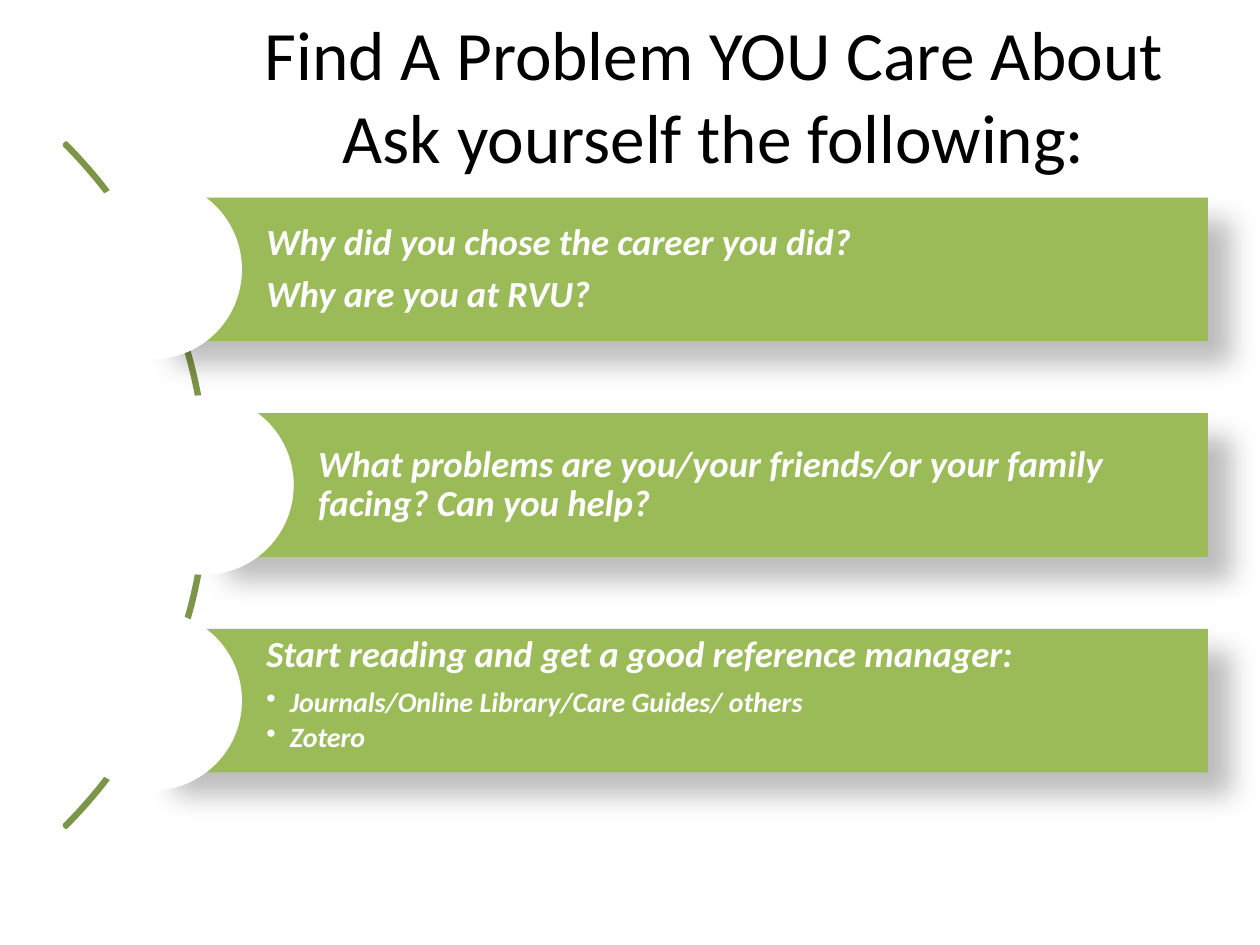
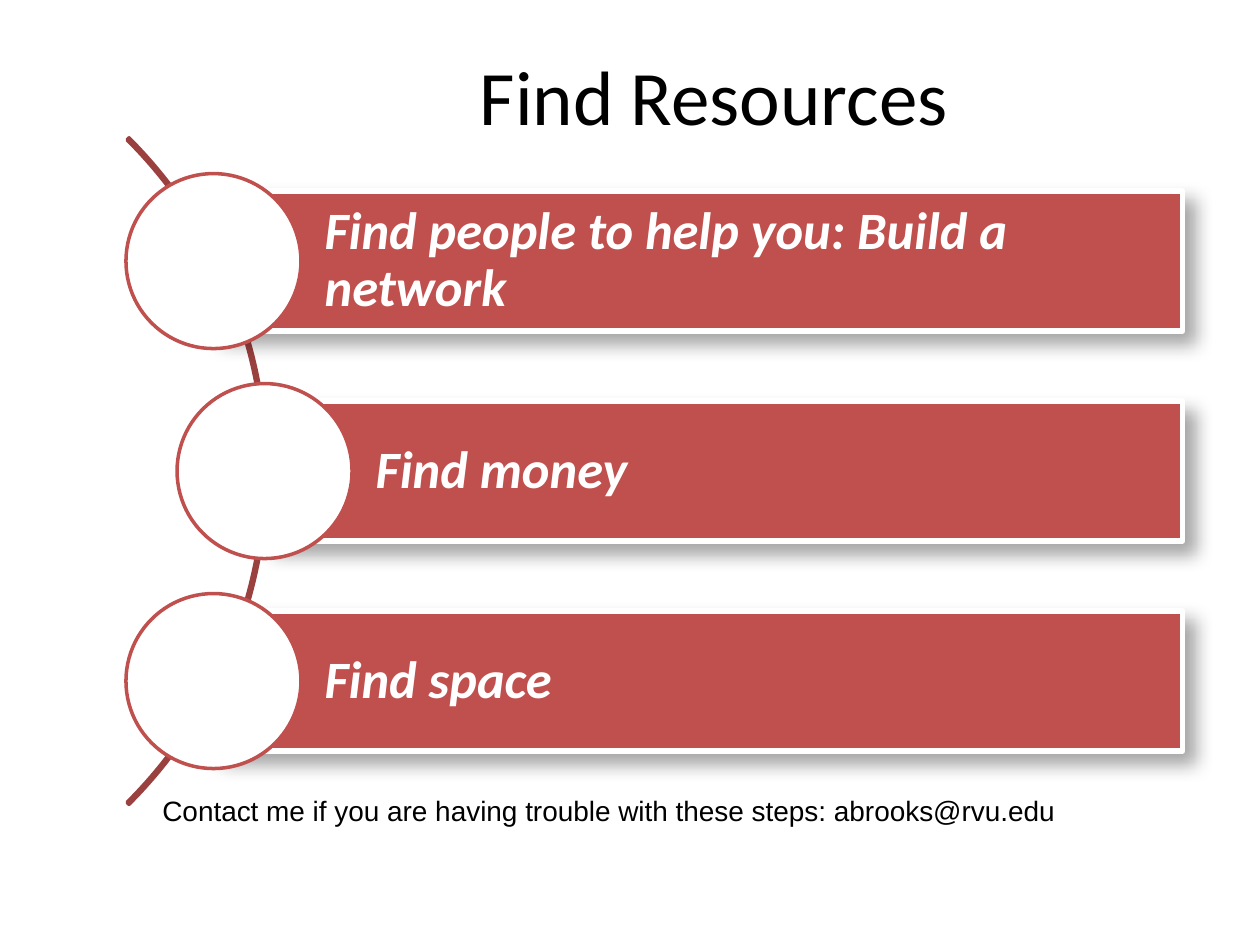
from lxml.etree import SubElement
from pptx import Presentation
from pptx.dml.color import RGBColor
from pptx.enum.shapes import MSO_SHAPE
from pptx.enum.text import MSO_ANCHOR, MSO_AUTO_SIZE, PP_ALIGN
from pptx.oxml.ns import qn
from pptx.util import Pt

WHITE, BLACK = "FFFFFF", "000000"
GREEN, DARK_GREEN = "9BBB59", "7C9647"
RED, DARK_RED = "C0504D", "9A403E"
CIRCLE_RATIO = 1.25  # circle diameter to bar height


def color(hex_text):
    return RGBColor.from_string(hex_text)


def add_text(tf, text, size, font="Calibri", fill=BLACK, bold=False, italic=False,
             align=None, spacing=None, after=None, bullet_indent=None):
    """Fill the first paragraph if it is empty, else add another one."""
    p = tf.paragraphs[0]
    if p.text:
        p = tf.add_paragraph()
    if bullet_indent:
        p_pr = p._p.get_or_add_pPr()
        p_pr.set("marL", str(Pt(bullet_indent)))
        p_pr.set("indent", str(-Pt(bullet_indent)))
        SubElement(p_pr, qn("a:buChar"), char="•")
    if align is not None:
        p.alignment = align
    if spacing:
        p.line_spacing = spacing
    if after is not None:
        p.space_after = Pt(after)
    for i, line in enumerate(text.split("\n")):
        if i:
            p.add_line_break()
        r = p.add_run()
        r.text = line
        r.font.name, r.font.size = font, Pt(size)
        r.font.bold, r.font.italic = bold, italic
        r.font.color.rgb = color(fill)


def add_title(s, text, size):
    sp = s.shapes.title
    sp.left, sp.top, sp.width, sp.height = Pt(84), Pt(9), Pt(648), Pt(90)
    tf = sp.text_frame
    tf.auto_size, tf.vertical_anchor = MSO_AUTO_SIZE.NONE, MSO_ANCHOR.MIDDLE
    add_text(tf, text, size, align=PP_ALIGN.CENTER)


def add_shape(s, kind, left, top, width, height, fill=None, line=None, line_width=2):
    sp = s.shapes.add_shape(kind, Pt(left), Pt(top), Pt(width), Pt(height))
    sp.shadow.inherit = False
    if fill:
        sp.fill.solid()
        sp.fill.fore_color.rgb = color(fill)
    else:
        sp.fill.background()
    if line:
        sp.line.color.rgb = color(line)
        sp.line.width = Pt(line_width)
    else:
        sp.line.fill.background()
    return sp


def add_shadow(sp, alpha, blur, distance):
    effects = sp._element.spPr.find(qn("a:effectLst"))
    shadow = SubElement(effects, qn("a:outerShdw"), blurRad=str(Pt(blur)),
                        dist=str(Pt(distance)), dir="2700000", algn="tl",
                        rotWithShape="0")
    rgb = SubElement(shadow, qn("a:srgbClr"), val=BLACK)
    SubElement(rgb, qn("a:alpha"), val=str(alpha * 1000))


def add_arc(s, left, mid, diameter, line):
    sp = add_shape(s, MSO_SHAPE.BLOCK_ARC, left, mid - diameter / 2,
                   diameter, diameter, line=line)
    # Angles in 1/60000 degree, scaled by 100000: from 315 to 45 degrees
    for i, value in enumerate((189, 27, 0.003)):
        sp.adjustments[i] = value


def add_step(s, left, mid, right, height, fill, inset, pad, shadow,
             bar_line=None, circle_line=None):
    """A bar with a circle centred on its left end; returns the bar's text frame."""
    bar = add_shape(s, MSO_SHAPE.RECTANGLE, left, mid - height / 2, right - left,
                    height, fill, bar_line, 3)
    add_shadow(bar, *shadow)
    d = height * CIRCLE_RATIO
    add_shape(s, MSO_SHAPE.OVAL, left - d / 2, mid - d / 2, d, d, WHITE, circle_line)
    tf = bar.text_frame
    tf.word_wrap, tf.vertical_anchor = True, MSO_ANCHOR.MIDDLE
    tf.margin_left = Pt(inset)
    tf.margin_top = tf.margin_right = tf.margin_bottom = Pt(pad)
    return tf


def add_steps(s, lefts, first_mid, pitch, **style):
    return [add_step(s, left, first_mid + i * pitch, **style)
            for i, left in enumerate(lefts)]


def add_step_text(tf, text, size, after=0.35, bullet_indent=None):
    add_text(tf, text, size, fill=WHITE, bold=True, italic=True, align=PP_ALIGN.LEFT,
             spacing=0.9, after=size * after, bullet_indent=bullet_indent)


def build_problem(s):
    add_title(s, "Find A Problem YOU Care About\nAsk yourself the following:", 39.6)
    add_arc(s, -434.2, 277.2, 553, DARK_GREEN)
    why, problems, reading = add_steps(
        s, (87, 116.6, 87), 154, 123.2, right=690.2, height=82.1, fill=GREEN,
        inset=65.2, pad=4.2, shadow=(26, 15, 18))
    add_step_text(why, "Why did you chose the career you did?", 21)
    add_step_text(why, "Why are you at RVU?", 21)
    add_step_text(problems, "What problems are you/your friends/or your family "
                  "facing? Can you help?", 21)
    reading.vertical_anchor = MSO_ANCHOR.TOP
    add_step_text(reading, "Start reading and get a good reference manager:", 21)
    for source in ("Journals/Online Library/Care Guides/ others", "Zotero"):
        add_step_text(reading, source, 16, after=0.15, bullet_indent=13.5)


def build_resources(s):
    add_title(s, "Find Resources", 44)
    add_arc(s, -386, 269.2, 538.6, DARK_RED)
    steps = add_steps(
        s, (122, 151.2, 122), 149.2, 120, right=675.8, height=80, fill=RED,
        inset=63.5, pad=6, shadow=(35, 10.2, 8), bar_line=WHITE, circle_line=RED)
    resources = ("Find people to help you: Build a network", "Find money", "Find space")
    for tf, text in zip(steps, resources):
        add_step_text(tf, text, 30)
    # Contact line
    tf = s.shapes.add_textbox(Pt(85.7), Pt(450), Pt(531.4), Pt(26.6)).text_frame
    tf.word_wrap = False
    add_text(tf, "Contact me if you are having trouble with these steps: "
             "abrooks@rvu.edu", 16, font="Arial")


def main():
    prs = Presentation()
    prs.slide_width, prs.slide_height = Pt(720), Pt(540)
    for build in (build_problem, build_resources):
        build(prs.slides.add_slide(prs.slide_layouts[5]))
    prs.save("out.pptx")


if __name__ == "__main__":
    main()
